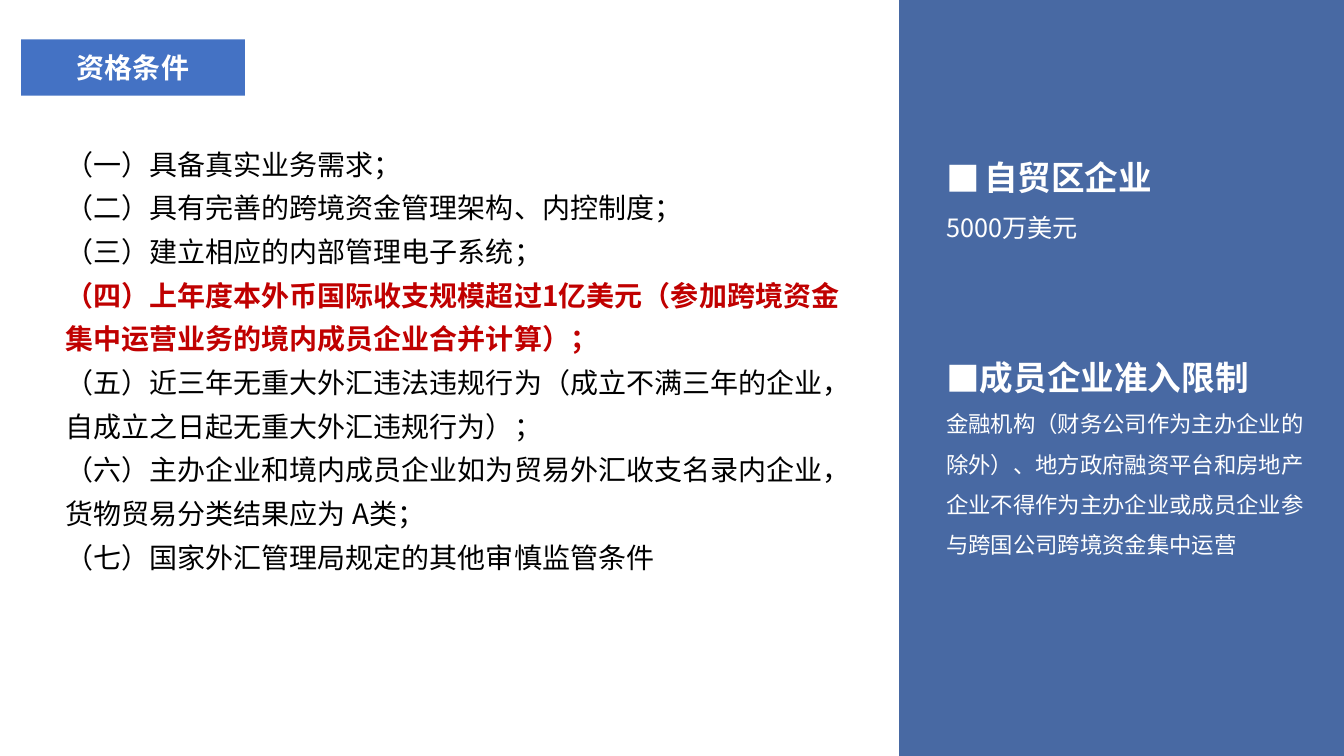
from lxml.etree import SubElement
from pptx import Presentation
from pptx.dml.color import RGBColor
from pptx.enum.shapes import MSO_SHAPE
from pptx.enum.text import MSO_ANCHOR, MSO_AUTO_SIZE, PP_ALIGN
from pptx.oxml.ns import qn
from pptx.util import Pt

FONT = "Noto Sans CJK SC"
WHITE = RGBColor(0xFF, 0xFF, 0xFF)
BLACK = RGBColor(0x00, 0x00, 0x00)
RED = RGBColor(0xC0, 0x00, 0x00)
TITLE_BLUE = RGBColor(0x44, 0x72, 0xC4)
PANEL_BLUE = RGBColor(0x2F, 0x55, 0x97)

TITLE = "资格条件"
CONDITIONS = [
    "（一）具备真实业务需求；",
    "（二）具有完善的跨境资金管理架构、内控制度；",
    "（三）建立相应的内部管理电子系统；",
    "（四）上年度本外币国际收支规模超过1亿美元（参加跨境资金集中运营业务的境内成员企业合并计算）；",
    "（五）近三年无重大外汇违法违规行为（成立不满三年的企业，自成立之日起无重大外汇违规行为）；",
    "（六）主办企业和境内成员企业如为贸易外汇收支名录内企业，货物贸易分类结果应为 A类；",
    "（七）国家外汇管理局规定的其他审慎监管条件",
]
KEY_CONDITION = 3
NOTES = [
    {"heading": "自贸区企业", "body": "5000万美元", "size": 18,
     "indent": 27, "top": 94.3, "width": 241.2, "height": 79.9},
    {"heading": "成员企业准入限制",
     "body": "金融机构（财务公司作为主办企业的除外）、地方政府融资平台和房地产"
             "企业不得作为主办企业或成员企业参与跨国公司跨境资金集中运营",
     "size": 16, "indent": 22.5, "top": 236.9, "width": 272.2, "height": 163.4},
]
NOTES_LEFT = 668.9


def add_block(slide, left, top, width, height, fill):
    block = slide.shapes.add_shape(
        MSO_SHAPE.RECTANGLE, Pt(left), Pt(top), Pt(width), Pt(height))
    block.shadow.inherit = False
    block.fill.solid()
    block.fill.fore_color.rgb = fill
    block.line.fill.background()
    return block


def add_frame(slide, left, top, width, height):
    frame = slide.shapes.add_textbox(
        Pt(left), Pt(top), Pt(width), Pt(height)).text_frame
    frame.word_wrap = True
    frame.auto_size = MSO_AUTO_SIZE.SHAPE_TO_FIT_TEXT
    return frame


def write(paragraph, text, size, color, bold=False, spacing=None):
    if spacing:
        paragraph.line_spacing = spacing
    run = paragraph.add_run()
    run.text = text
    run.font.size = Pt(size)
    run.font.bold = bold
    run.font.color.rgb = color
    run.font.name = FONT
    SubElement(run.font._element, qn("a:ea"), typeface=FONT)


def add_bullet(paragraph, indent):
    properties = paragraph._p.get_or_add_pPr()
    properties.set("marL", str(Pt(indent)))
    properties.set("indent", str(-Pt(indent)))
    SubElement(properties, qn("a:buFont"), typeface=FONT)
    SubElement(properties, qn("a:buChar"), char="■")


def main():
    deck = Presentation()
    deck.slide_width, deck.slide_height = Pt(960), Pt(540)
    slide = deck.slides.add_slide(deck.slide_layouts[6])

    title = add_block(slide, 15.1, 28.1, 159.8, 40.3, TITLE_BLUE).text_frame
    title.vertical_anchor = MSO_ANCHOR.MIDDLE
    title.paragraphs[0].alignment = PP_ALIGN.CENTER
    write(title.paragraphs[0], TITLE, 20, WHITE, True)

    conditions = add_frame(slide, 39.6, 94.3, 573.8, 319)
    for index, condition in enumerate(CONDITIONS):
        paragraph = conditions.add_paragraph() if index else conditions.paragraphs[0]
        key = index == KEY_CONDITION
        write(paragraph, condition, 20, RED if key else BLACK, key, 1.3)

    panel = add_block(slide, 642.2, 0, 322.6, 540, PANEL_BLUE)
    panel_color = panel._element.spPr.find(qn("a:solidFill"))[0]
    SubElement(panel_color, qn("a:alpha"), val="88000")

    for note in NOTES:
        frame = add_frame(slide, NOTES_LEFT, note["top"], note["width"], note["height"])
        heading = frame.paragraphs[0]
        add_bullet(heading, note["indent"])
        write(heading, note["heading"], 24, WHITE, True, 1.5)
        write(frame.add_paragraph(), note["body"], note["size"], WHITE, spacing=1.5)

    deck.save("out.pptx")


if __name__ == "__main__":
    main()
